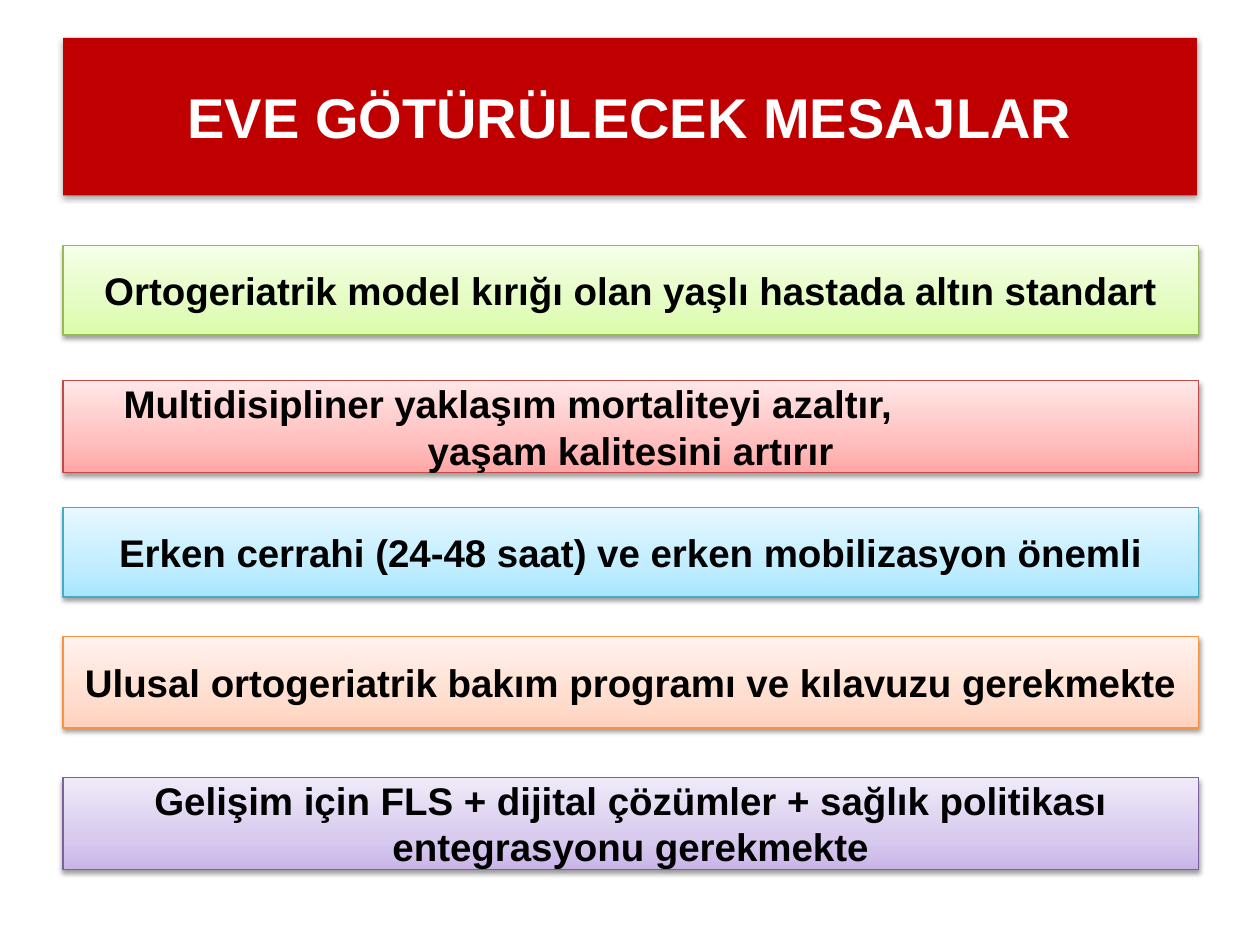
from copy import deepcopy
from typing import NamedTuple

from lxml.etree import SubElement
from pptx import Presentation
from pptx.dml.color import RGBColor
from pptx.enum.shapes import MSO_SHAPE
from pptx.enum.text import MSO_ANCHOR, MSO_AUTO_SIZE, PP_ALIGN
from pptx.oxml.ns import qn
from pptx.util import Pt

BLACK = RGBColor(0x00, 0x00, 0x00)
WHITE = RGBColor(0xFF, 0xFF, 0xFF)
TITLE_RED = RGBColor(0xC0, 0x00, 0x00)

GREEN_STOPS = (RGBColor(0xDA, 0xFD, 0xA7), RGBColor(0xE4, 0xFC, 0xC2), RGBColor(0xF5, 0xFF, 0xE7))
RED_STOPS = (RGBColor(0xFF, 0xA6, 0xA5), RGBColor(0xFF, 0xC0, 0xBF), RGBColor(0xFF, 0xE7, 0xE7))
BLUE_STOPS = (RGBColor(0xA7, 0xE6, 0xFF), RGBColor(0xC1, 0xED, 0xFF), RGBColor(0xE7, 0xF8, 0xFF))
ORANGE_STOPS = (RGBColor(0xFF, 0xD2, 0xBD), RGBColor(0xFF, 0xDE, 0xD0), RGBColor(0xFF, 0xF2, 0xED))
PURPLE_STOPS = (RGBColor(0xC9, 0xB5, 0xE8), RGBColor(0xD8, 0xCB, 0xEE), RGBColor(0xF0, 0xEA, 0xF9))
GREEN_LINE = RGBColor(0x98, 0xB9, 0x55)
RED_LINE = RGBColor(0xBF, 0x4C, 0x48)
BLUE_LINE = RGBColor(0x46, 0xAA, 0xC5)
ORANGE_LINE = RGBColor(0xF6, 0x92, 0x40)
PURPLE_LINE = RGBColor(0x7D, 0x60, 0xA0)

STOP_POSITIONS = (0, 0.35, 1)
LEFT = 36


class Message(NamedTuple):
    lines: tuple[str, ...]
    top: float
    height: float
    stops: tuple[RGBColor, ...]
    outline: RGBColor
    first_indent: float | None = None  # left-aligns the first line at this indent


MESSAGES = (
    Message(("Ortogeriatrik model kırığı olan yaşlı hastada altın standart",),
            140.4, 51.1, GREEN_STOPS, GREEN_LINE),
    Message(("Multidisipliner yaklaşım mortaliteyi azaltır,", "yaşam kalitesini artırır"),
            217.5, 52.5, RED_STOPS, RED_LINE, first_indent=27.5),
    Message(("Erken cerrahi (24-48 saat) ve erken mobilizasyon önemli",),
            290, 51.1, BLUE_STOPS, BLUE_LINE),
    Message(("Ulusal ortogeriatrik bakım programı ve kılavuzu gerekmekte",),
            363.6, 52.5, ORANGE_STOPS, ORANGE_LINE),
    Message(("Gelişim için FLS + dijital çözümler + sağlık politikası entegrasyonu gerekmekte",),
            444.3, 52.5, PURPLE_STOPS, PURPLE_LINE),
)


def write_text(shape, lines: tuple[str, ...], *, size: float, color: RGBColor,
               first_indent: float | None = None) -> None:
    frame = shape.text_frame
    frame.word_wrap = True
    frame.auto_size = MSO_AUTO_SIZE.NONE
    frame.vertical_anchor = MSO_ANCHOR.MIDDLE
    frame.text = "\n".join(lines)
    for paragraph in frame.paragraphs:
        paragraph.alignment = PP_ALIGN.CENTER
        for run in paragraph.runs:
            run.font.name = "Arial"
            run.font.size = Pt(size)
            run.font.bold = True
            run.font.color.rgb = color
    if first_indent is not None:
        first = frame.paragraphs[0]
        first.alignment = PP_ALIGN.LEFT
        first._p.get_or_add_pPr().set("marL", str(Pt(first_indent)))


def add_shadow(shape, *, distance: float, opacity: int) -> None:
    shape.shadow.inherit = False
    effects = shape._element.spPr.find(qn("a:effectLst"))
    shadow = SubElement(effects, qn("a:outerShdw"), blurRad=str(Pt(3.1)),
                        dist=str(Pt(distance)), dir="5400000", rotWithShape="0")
    color = SubElement(shadow, qn("a:srgbClr"), val=str(BLACK))
    SubElement(color, qn("a:alpha"), val=str(opacity * 1000))


def fill_gradient(shape, colors: tuple[RGBColor, ...]) -> None:
    """Fill from bottom to top with three colour stops."""
    shape.fill.gradient()
    shape.fill.gradient_angle = 90
    stop_list = shape._element.spPr.find(qn("a:gradFill")).find(qn("a:gsLst"))
    stop_list.append(deepcopy(stop_list[-1]))
    for stop, position, color in zip(shape.fill.gradient_stops, STOP_POSITIONS, colors):
        stop.position = position
        stop.color.rgb = color


def add_message(slide, message: Message) -> None:
    bar = slide.shapes.add_shape(MSO_SHAPE.RECTANGLE, Pt(LEFT), Pt(message.top),
                                 Pt(648.7), Pt(message.height))
    fill_gradient(bar, message.stops)
    bar.line.color.rgb = message.outline
    bar.line.width = Pt(0.75)
    add_shadow(bar, distance=1.6, opacity=38)
    write_text(bar, message.lines, size=22, color=BLACK, first_indent=message.first_indent)


def format_title(title) -> None:
    title.left, title.top, title.width, title.height = Pt(LEFT), Pt(21.6), Pt(648), Pt(90)
    title.fill.solid()
    title.fill.fore_color.rgb = TITLE_RED
    add_shadow(title, distance=1.8, opacity=35)
    write_text(title, ("EVE GÖTÜRÜLECEK MESAJLAR",), size=32, color=WHITE)


def main() -> None:
    presentation = Presentation()
    presentation.slide_width, presentation.slide_height = Pt(720), Pt(540)
    slide = presentation.slides.add_slide(presentation.slide_layouts[5])
    format_title(slide.shapes.title)
    for message in MESSAGES:
        add_message(slide, message)
    presentation.save("out.pptx")


if __name__ == "__main__":
    main()
